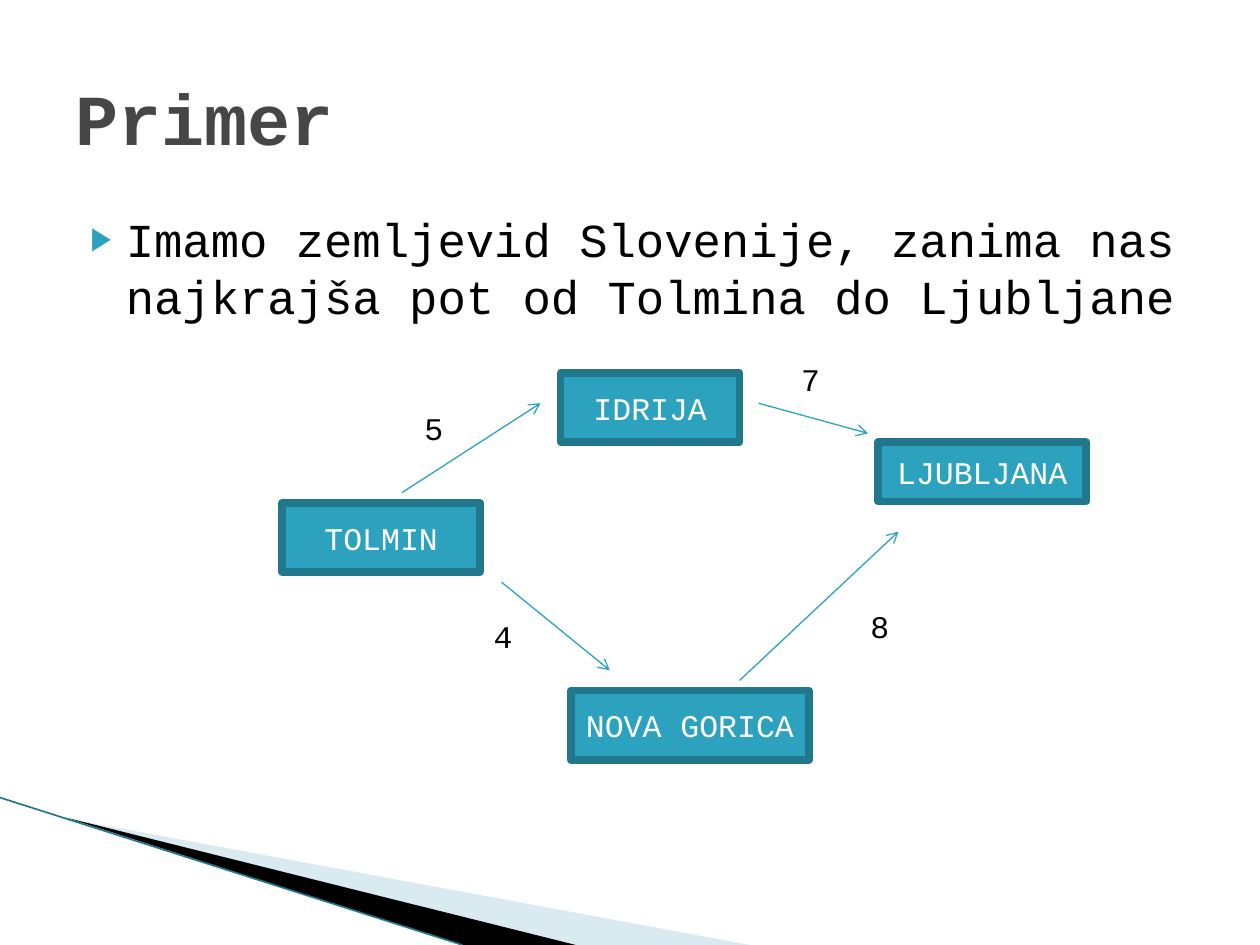
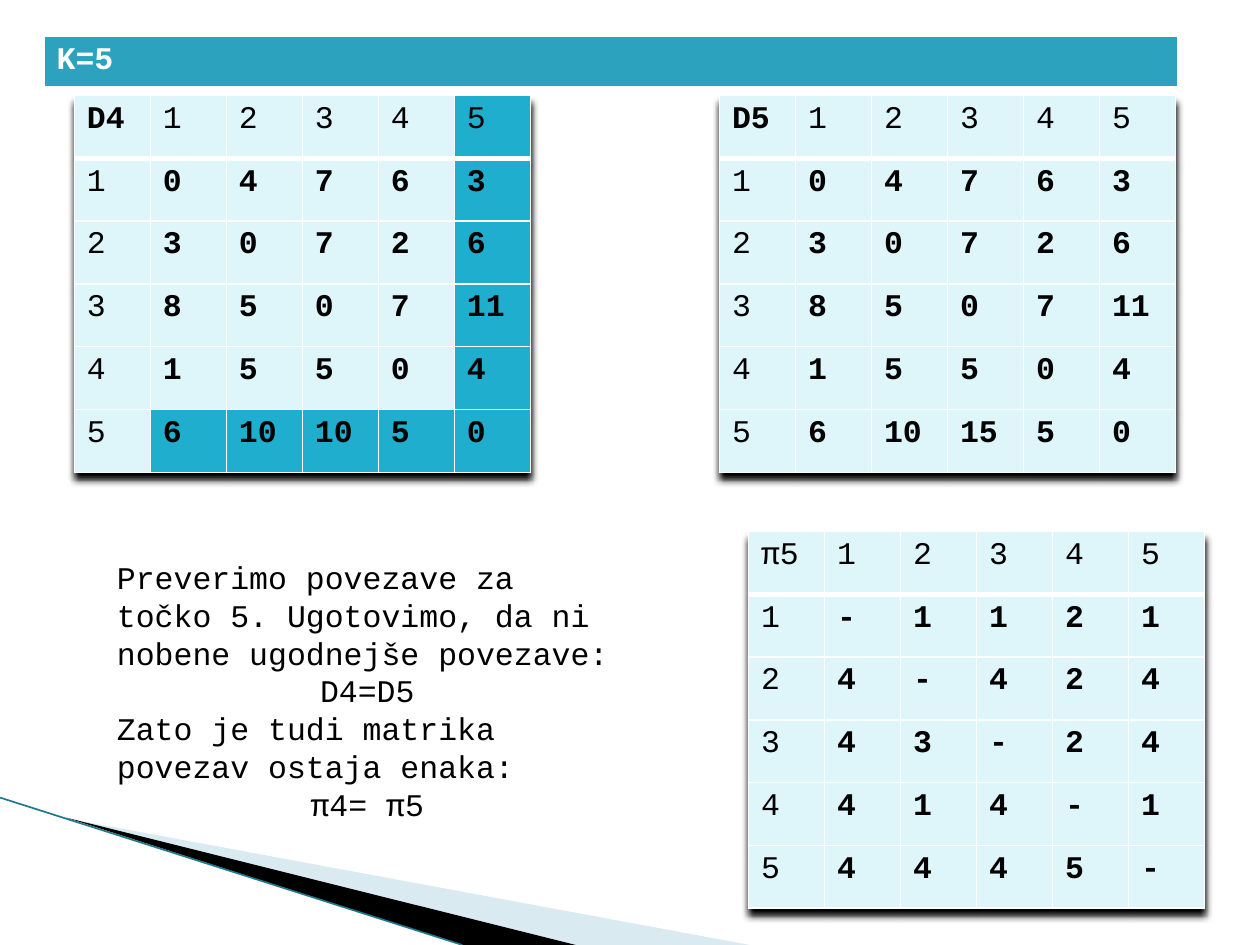
import pptx
import pptx.util
import pptx.dml.color
import pptx.enum.shapes
import pptx.enum.text
import pptx.oxml
import pptx.oxml.ns

Inches = pptx.util.Inches
Pt = pptx.util.Pt
RGBColor = pptx.dml.color.RGBColor
PP_ALIGN = pptx.enum.text.PP_ALIGN
MSO_ANCHOR = pptx.enum.text.MSO_ANCHOR

FONT = "Courier New"
BLACK = RGBColor(0x00, 0x00, 0x00)
WHITE = RGBColor(0xFF, 0xFF, 0xFF)
TITLE_GRAY = RGBColor(0x46, 0x46, 0x46)
TEAL = RGBColor(0x2D, 0xA2, 0xBF)
DARK_TEAL = RGBColor(0x21, 0x78, 0x8D)
PALE_BLUE = RGBColor(0xA0, 0xCB, 0xDC)
CELL_LIGHT = RGBColor(0xDE, 0xF5, 0xFA)
CELL_MARKED = RGBColor(0x1F, 0xAE, 0xCD)

TITLE = "Primer"
INTRO = "Imamo zemljevid Slovenije, zanima nas najkrajša pot od Tolmina do Ljubljane"
CITIES = [
    ("LJUBLJANA", 6.97, 3.51, 1.65, 0.47),
    ("TOLMIN", 2.24, 3.99, 1.57, 0.55),
    ("NOVA GORICA", 4.53, 5.48, 1.89, 0.55),
    ("IDRIJA", 4.45, 2.96, 1.42, 0.55),
]
ROADS = [
    ("5", (3.19, 3.91), (4.29, 3.2), (3.27, 3.2)),
    ("4", (3.98, 4.62), (4.84, 5.32), (3.82, 4.85)),
    ("7", (6.02, 3.2), (6.89, 3.44), (6.26, 2.81)),
    ("8", (5.87, 5.4), (7.13, 4.22), (6.81, 4.77)),
]

BAND_TEXT = "K=5"
MATRIX_SIZE = (3.62, 2.99)
NODES = ["1", "2", "3", "4", "5"]
PIVOT = 5
MATRICES = [
    {"name": "D5", "at": (5.71, 0.76), "bold_name": True, "marked": False,
     "rows": ["0 4 7 6 3", "3 0 7 2 6", "8 5 0 7 11", "1 5 5 0 4", "6 10 15 5 0"]},
    {"name": "π5", "at": (5.94, 4.22), "bold_name": False, "marked": False,
     "rows": ["- 1 1 2 1", "4 - 4 2 4", "4 3 - 2 4", "4 1 4 - 1", "4 4 4 5 -"]},
    {"name": "D4", "at": (0.59, 0.76), "bold_name": True, "marked": True,
     "rows": ["0 4 7 6 3", "3 0 7 2 6", "8 5 0 7 11", "1 5 5 0 4", "6 10 10 5 0"]},
]
CONCLUSION = [
    ("Preverimo povezave za točko 5. Ugotovimo, da ni nobene ugodnejše povezave:", PP_ALIGN.LEFT),
    ("D4=D5", PP_ALIGN.CENTER),
    ("Zato je tudi matrika povezav ostaja enaka:", PP_ALIGN.LEFT),
    ("π4= π5", PP_ALIGN.CENTER),
]

WEDGES = [
    ([(0.55, 6.5), (5.95, 7.5), (4.56, 7.5)], PALE_BLUE, 40),
    ([(0.53, 6.49), (4.57, 7.5), (3.67, 7.5)], BLACK, 100),
]
WEDGE_EDGE = ((0, 6.33), (3.67, 7.5))


def element(content):
    namespace = pptx.oxml.ns.nsdecls("a")
    tag, rest = content[1:].split(" ", 1)
    return pptx.oxml.parse_xml(f"<{tag} {namespace} {rest}")


def write(paragraph, text, size=18, color=BLACK, bold=False, align=PP_ALIGN.LEFT):
    paragraph.text = text
    paragraph.alignment = align
    for run in paragraph.runs:
        run.font.name = FONT
        run.font.size = Pt(size)
        run.font.bold = bold
        run.font.color.rgb = color


def add_text_box(slide, box, grow=False):
    text_frame = slide.shapes.add_textbox(*map(Inches, box)).text_frame
    text_frame.word_wrap = True
    if grow:
        text_frame.auto_size = pptx.enum.text.MSO_AUTO_SIZE.SHAPE_TO_FIT_TEXT
    return text_frame


def add_line(slide, start, end, color, width, arrow=False):
    connector = slide.shapes.add_connector(
        pptx.enum.shapes.MSO_CONNECTOR.STRAIGHT, *map(Inches, start + end))
    connector.line.color.rgb = color
    connector.line.width = Pt(width)
    if arrow:
        connector.line._get_or_add_ln().append(element('<a:tailEnd type="arrow"/>'))
    connector._element.spPr.append(element("<a:effectLst />"))


def add_slide(presentation):
    slide = presentation.slides.add_slide(presentation.slide_layouts[6])
    for corners, color, opacity in WEDGES:
        points = [tuple(map(Inches, corner)) for corner in corners]
        builder = slide.shapes.build_freeform(*points[0])
        builder.add_line_segments(points[1:], close=True)
        wedge = builder.convert_to_shape()
        wedge.shadow.inherit = False
        wedge.line.fill.background()
        wedge.fill.solid()
        wedge.fill.fore_color.rgb = color
        if opacity < 100:
            color_element = wedge._element.spPr.find(".//" + pptx.oxml.ns.qn("a:srgbClr"))
            color_element.append(element(f'<a:alpha val="{opacity * 1000}"/>'))
    add_line(slide, *WEDGE_EDGE, DARK_TEAL, 0.95)
    return slide


def add_city(slide, name, *box):
    city = slide.shapes.add_shape(pptx.enum.shapes.MSO_SHAPE.RECTANGLE, *map(Inches, box))
    city.shadow.inherit = False
    city.fill.solid()
    city.fill.fore_color.rgb = TEAL
    city.line.color.rgb = DARK_TEAL
    city.line.width = Pt(4.33)
    city.text_frame.word_wrap = True
    city.text_frame.vertical_anchor = MSO_ANCHOR.MIDDLE
    write(city.text_frame.paragraphs[0], name, color=WHITE, align=PP_ALIGN.CENTER)


def style_cell(cell, text, fill, top=1, bottom=1, **text_style):
    properties = cell._tc.get_or_add_tcPr()
    for side, width in (("L", 1), ("R", 1), ("T", top), ("B", bottom)):
        properties.append(element(
            f'<a:ln{side} w="{Pt(width)}"><a:solidFill><a:srgbClr val="{WHITE}"/>'
            f'</a:solidFill></a:ln{side}>'))
    cell.fill.solid()
    cell.fill.fore_color.rgb = fill
    write(cell.text_frame.paragraphs[0], text, **text_style)


def add_table(slide, rows, columns, box):
    left, top, width, height = map(Inches, box)
    table = slide.shapes.add_table(rows, columns, left, top, width, height).table
    return table


def add_matrix(slide, matrix):
    grid = [[matrix["name"]] + NODES]
    grid += [[node] + values.split() for node, values in zip(NODES, matrix["rows"])]
    table = add_table(slide, len(grid), len(grid[0]), matrix["at"] + MATRIX_SIZE)
    table._tbl.tblPr.insert(0, element(
        f'<a:effectLst ><a:outerShdw blurRad="{Pt(4)}" dist="{Pt(4)}" dir="5400000" '
        f'rotWithShape="0"><a:srgbClr val="{BLACK}"/></a:outerShdw></a:effectLst>'))
    for row, values in enumerate(grid):
        for column, value in enumerate(values):
            on_pivot = column == PIVOT or (row == PIVOT and column > 0)
            is_name = row == column == 0
            style_cell(
                table.cell(row, column), value,
                CELL_MARKED if matrix["marked"] and on_pivot else CELL_LIGHT,
                top=3 if row == 1 else 1,
                bottom=3 if row == 0 else 1,
                bold=matrix["bold_name"] if is_name else row > 0 and column > 0)


def build_map_slide(presentation):
    slide = add_slide(presentation)

    paragraph = add_text_box(slide, (0.5, 1.62, 9, 1.2)).paragraphs[0]
    properties = paragraph._p.get_or_add_pPr()
    properties.set("marL", str(Inches(0.4)))
    properties.set("indent", str(Inches(-0.28)))
    for bullet in (f'<a:buClr ><a:srgbClr val="{TEAL}"/></a:buClr>',
                   '<a:buSzPct val="68000"/>',
                   '<a:buFont typeface="Arial"/>',
                   '<a:buChar char="▶"/>'):
        properties.append(element(bullet))
    write(paragraph, INTRO, size=27)

    title_frame = add_text_box(slide, (0.5, 0.3, 9, 1.25))
    title_frame.vertical_anchor = MSO_ANCHOR.MIDDLE
    write(title_frame.paragraphs[0], TITLE, size=41, color=TITLE_GRAY, bold=True)

    for city in CITIES:
        add_city(slide, *city)
    for distance, start, end, label_at in ROADS:
        add_line(slide, start, end, TEAL, 0.75, arrow=True)
        label = add_text_box(slide, label_at + (0.36, 0.4), grow=True)
        write(label.paragraphs[0], distance)


def build_matrix_slide(presentation):
    slide = add_slide(presentation)
    band = add_table(slide, 1, 1, (0.35, 0.29, 9, 0.41))
    style_cell(band.cell(0, 0), BAND_TEXT, TEAL, bottom=3, color=WHITE, bold=True)
    for matrix in MATRICES:
        add_matrix(slide, matrix)

    text_frame = add_text_box(slide, (0.83, 4.38, 4.17, 2.22), grow=True)
    for index, (text, align) in enumerate(CONCLUSION):
        paragraph = text_frame.add_paragraph() if index else text_frame.paragraphs[0]
        write(paragraph, text, align=align)


def main():
    presentation = pptx.Presentation()
    presentation.slide_width = Inches(10)
    presentation.slide_height = Inches(7.5)
    build_map_slide(presentation)
    build_matrix_slide(presentation)
    presentation.save("out.pptx")


if __name__ == "__main__":
    main()
